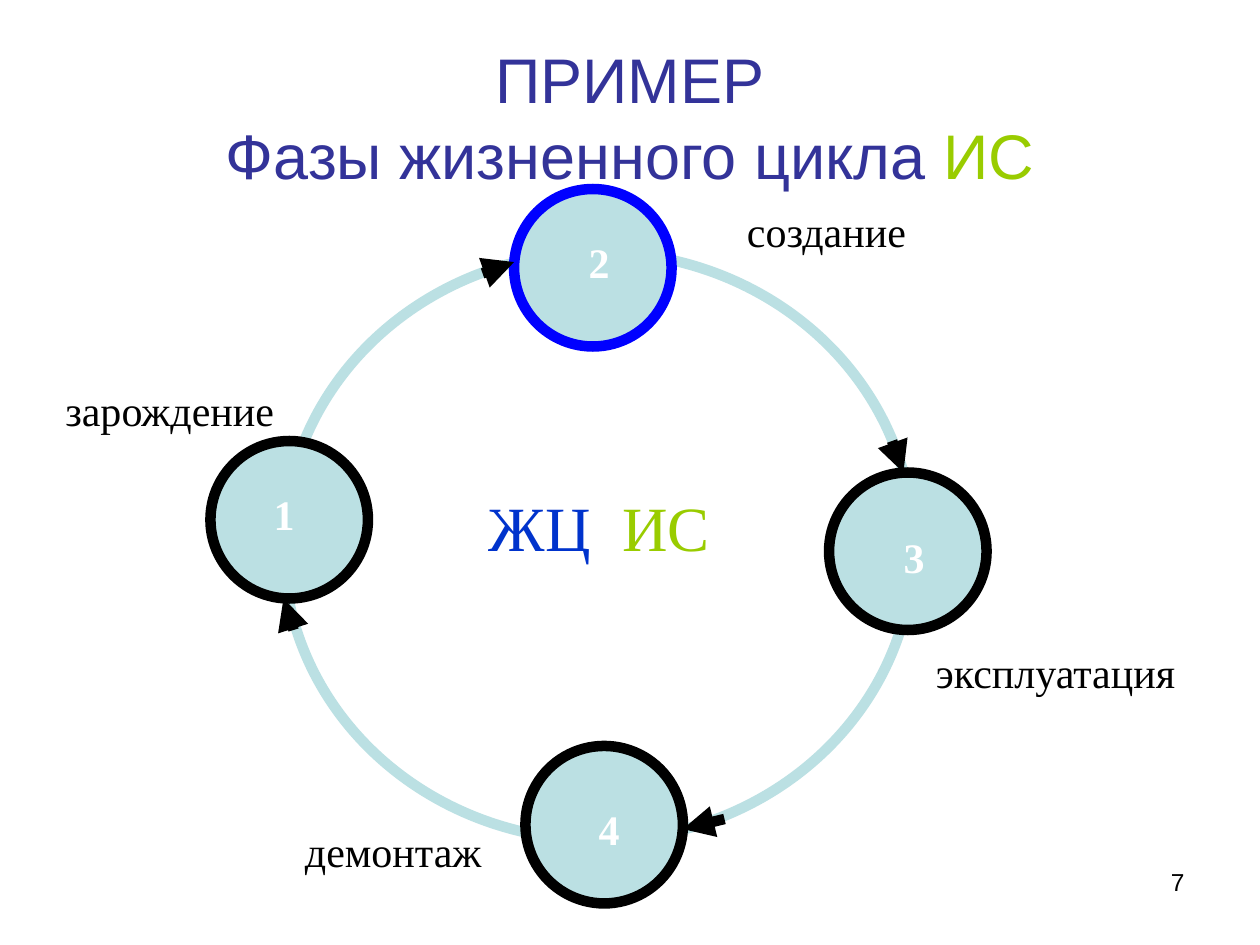
from lxml.etree import SubElement
from pptx import Presentation
from pptx.dml.color import RGBColor
from pptx.enum.shapes import MSO_CONNECTOR, MSO_SHAPE
from pptx.enum.text import MSO_ANCHOR, MSO_AUTO_SIZE, PP_ALIGN
from pptx.oxml.ns import qn
from pptx.util import Inches, Pt

BLACK = RGBColor(0x00, 0x00, 0x00)
WHITE = RGBColor(0xFF, 0xFF, 0xFF)
PALE_TEAL = RGBColor(0xBB, 0xE0, 0xE3)
BLUE = RGBColor(0x00, 0x00, 0xFF)
ROYAL = RGBColor(0x00, 0x33, 0xCC)
INDIGO = RGBColor(0x33, 0x33, 0x99)
GREEN = RGBColor(0x99, 0xCC, 0x00)

SERIF = "Times New Roman"
STROKE = Pt(6)
NODE_SIZE = 1.25

PHASES = [
    ("1", (1.67, 3.5), (1.92, 3.83), BLACK),
    ("2", (4.08, 1.5), (4.42, 1.83), BLUE),
    ("3", (6.58, 3.75), (6.92, 4.17), BLACK),
    ("4", (4.17, 5.92), (4.5, 6.33), BLACK),
]
ARROWS = [
    ((3.83, 2.17), (4.08, 2.08)),
    ((7.08, 3.5), (7.17, 3.75)),
    ((5.75, 6.5), (5.42, 6.58)),
    ((2.33, 5), (2.25, 4.75)),
]
LABELS = [
    ("зарождение", (0.42, 3, 1.92, 0.5), PP_ALIGN.LEFT),
    ("создание", (5.83, 1.58, 1.5, 0.5), PP_ALIGN.LEFT),
    ("эксплуатация", (7.33, 5.08, 2.17, 0.5), PP_ALIGN.LEFT),
    ("демонтаж", (2.25, 6.5, 1.67, 0.5), PP_ALIGN.RIGHT),
]


def add_run(paragraph, text, size, color, font=SERIF, bold=False):
    """Append one formatted run to a paragraph."""
    run = paragraph.add_run()
    run.text = text
    run.font.name = font
    run.font.size = Pt(size)
    run.font.bold = bold
    run.font.color.rgb = color


def add_text(slide, box, align):
    """Add a wrapping text box and return its first paragraph."""
    frame = slide.shapes.add_textbox(*map(Inches, box)).text_frame
    frame.word_wrap = True
    paragraph = frame.paragraphs[0]
    paragraph.alignment = align
    return paragraph


def add_circle(slide, box, outline, fill=None):
    """Add an outlined ellipse, hollow unless a fill is given."""
    circle = slide.shapes.add_shape(MSO_SHAPE.OVAL, *map(Inches, box))
    circle.shadow.inherit = False
    if fill is None:
        circle.fill.background()
    else:
        circle.fill.solid()
        circle.fill.fore_color.rgb = fill
    circle.line.color.rgb = outline
    circle.line.width = STROKE


def add_arrow(slide, start, end):
    """Add a short thick arrow pointing at its end."""
    arrow = slide.shapes.add_connector(
        MSO_CONNECTOR.STRAIGHT, *map(Inches, start + end))
    arrow.line.color.rgb = BLACK
    arrow.line.width = STROKE
    SubElement(arrow.line._get_or_add_ln(), qn("a:tailEnd"), type="triangle")
    SubElement(arrow._element.spPr, qn("a:effectLst"))


def fill_title(slide, box):
    """Place the two-line heading in the title placeholder."""
    title = slide.shapes.title
    title.left, title.top, title.width, title.height = map(Inches, box)
    frame = title.text_frame
    frame.word_wrap = True
    frame.auto_size = MSO_AUTO_SIZE.NONE
    frame.vertical_anchor = MSO_ANCHOR.MIDDLE
    example, subject = frame.paragraphs[0], frame.add_paragraph()
    add_run(example, "ПРИМЕР", 36, INDIGO, "Arial")
    add_run(subject, "Фазы жизненного цикла ", 36, INDIGO, "Arial")
    add_run(subject, "ИС", 36, GREEN, "Arial")
    for line in (example, subject):
        line.alignment = PP_ALIGN.CENTER
        line.space_before = Pt(0)


def draw_cycle(slide, box):
    """Draw the ring with its phases, arrows and centre caption."""
    left, top, width, height = box
    add_circle(slide, box, PALE_TEAL)
    for _, corner, _, outline in PHASES:
        add_circle(slide, (*corner, NODE_SIZE, NODE_SIZE), outline, PALE_TEAL)
    for number, _, corner, _ in PHASES:
        paragraph = add_text(slide, (*corner, 0.67, 0.5), PP_ALIGN.CENTER)
        add_run(paragraph, number, 24, WHITE, bold=True)
    for start, end in ARROWS:
        add_arrow(slide, start, end)
    for label, place, align in LABELS:
        add_run(add_text(slide, place, align), label, 24, BLACK)
    caption = add_text(
        slide, (left + 1.42, top + 1.83, 2.17, 0.7), PP_ALIGN.CENTER)
    add_run(caption, "ЖЦ  ", 36, ROYAL)
    add_run(caption, "ИС", 36, GREEN)


def add_page_number(slide, box):
    """Write the page number at the right of its box."""
    add_run(add_text(slide, box, PP_ALIGN.RIGHT), "7", 14, BLACK, "Arial")


def main():
    """Build and save the life-cycle slide."""
    deck = Presentation()
    deck.slide_width, deck.slide_height = Inches(10), Inches(7.5)
    slide = deck.slides.add_slide(deck.slide_layouts[5])
    add_page_number(slide, (7.17, 6.83, 2.33, 0.52))
    fill_title(slide, (0.5, 0.3, 9, 1.25))
    draw_cycle(slide, (2.25, 2, 5, 4.67))
    deck.save("out.pptx")


if __name__ == "__main__":
    main()
